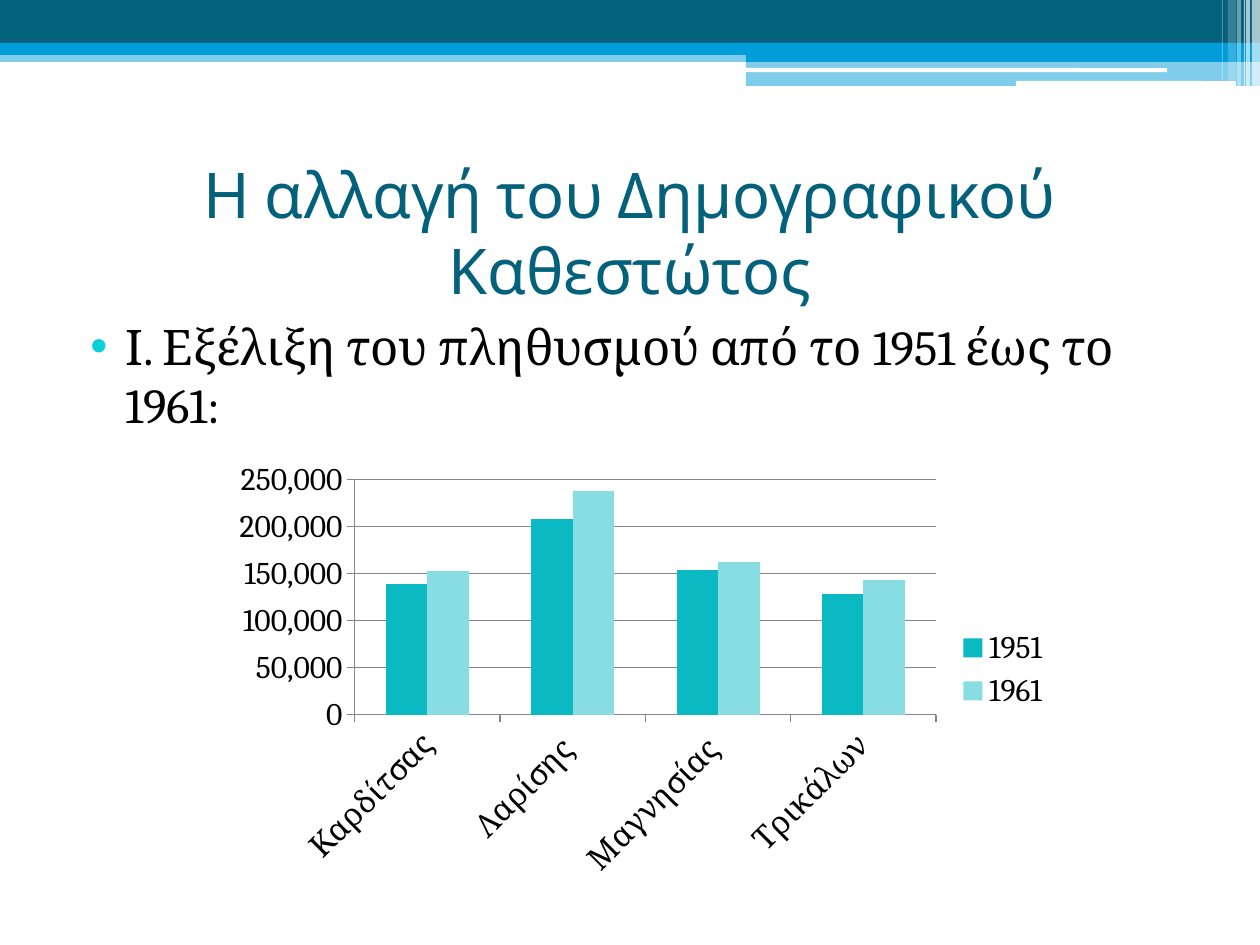
from lxml import etree
from pptx import Presentation, util as u
from pptx.chart.data import CategoryChartData
from pptx.dml.color import RGBColor
from pptx.enum import chart as ch, shapes, text
from pptx.oxml import parse_xml
from pptx.oxml.ns import qn, nsdecls

PX = 914400 // 126
WHITE, DEEP, BLUE = "FFFFFF", "04617B", "009DD9"

# Header bands: left, top, width, height, colour, opacity %
BANDS = [
    (0, 50, 1260, 12, BLUE, 50),
    (0, 0, 1260, 43, DEEP, 100),
    (0, 43, 1260, 12, BLUE, 100),
    (746, 49, 514, 13, BLUE, 100),
    (746, 61, 514, 25, BLUE, 50),
]
# Rounded white lines over the bands
LINES = [(745, 68, 422, 4, WHITE, 100), (1016, 81, 220, 5, WHITE, 100)]
# Vertical stripes at the right: left, width, height, opacity %
STRIPES = [(1252, 8, 86, 65), (1246, 4, 86, 65), (1244, 1, 86, 60),
           (1237, 4, 86, 40), (1228, 8, 81, 20), (1222, 1, 81, 30)]

TITLE = "Η αλλαγή του Δημογραφικού Καθεστώτος"
POINT = "Ι. Εξέλιξη του πληθυσμού από το 1951 έως το 1961:"
AREAS = ["Καρδίτσας", "Λαρίσης ", "Μαγνησίας ", "Τρικάλων"]
SERIES = [("1951", (139000, 208000, 154000, 128000), "0BB9C3"),
          ("1961", (153000, 238000, 162000, 143000), "87DDE1")]
FRAME = (223, 452, 840, 435)
PLOT = (355, 480, 581, 235)


def emu(*nums):
    return [u.Emu(n * PX) for n in nums]


def rgb(code):
    return RGBColor.from_string(code)


def style(font, name, size, color):
    font.name, font.size = name, u.Pt(size)
    font.color.rgb = rgb(color)


def band(kind, x, y, w, h, color, alpha):
    shape = slide.shapes.add_shape(kind, *emu(x, y, w, h))
    shape.shadow.inherit = False
    shape.line.fill.background()
    shape.fill.solid()
    shape.fill.fore_color.rgb = rgb(color)
    if alpha < 100:
        tint = shape.fill._xPr.find(".//" + qn("a:srgbClr"))
        etree.SubElement(tint, qn("a:alpha"), val=str(alpha * 1000))


def write(box, words, name, size, color, anchor):
    frame = slide.shapes.add_textbox(*emu(*box)).text_frame
    frame.word_wrap = True
    frame.vertical_anchor = anchor
    para = frame.paragraphs[0]
    run = para.add_run()
    run.text = words
    style(run.font, name, size, color)
    return para


deck = Presentation()
deck.slide_width, deck.slide_height = emu(1260, 945)
slide = deck.slides.add_slide(deck.slide_layouts[6])

# Header
for item in BANDS:
    band(shapes.MSO_SHAPE.RECTANGLE, *item)
for item in LINES:
    band(shapes.MSO_SHAPE.ROUNDED_RECTANGLE, *item)
for x, w, h, alpha in STRIPES:
    band(shapes.MSO_SHAPE.RECTANGLE, x, 0, w, h, WHITE, alpha)

# Title and bullet
para = write((63, 157, 1134, 148), TITLE, "Cabin", 36, DEEP, text.MSO_ANCHOR.MIDDLE)
para.alignment = text.PP_ALIGN.CENTER
para = write((63, 310, 1134, 130), POINT, "Cambria", 28, "000000", text.MSO_ANCHOR.TOP)
props = para._p.get_or_add_pPr()
left, hang = emu(50, -35)
props.set("marL", str(left))
props.set("indent", str(hang))
tint = etree.SubElement(props, qn("a:buClr"))
etree.SubElement(tint, qn("a:srgbClr"), val="0BD0D9")
etree.SubElement(props, qn("a:buFont"), typeface="Arial")
etree.SubElement(props, qn("a:buChar"), char="•")

# Population chart
data = CategoryChartData(number_format="#,##0")
data.categories = AREAS
for name, vals, color in SERIES:
    data.add_series(name, vals)
chart = slide.shapes.add_chart(
    ch.XL_CHART_TYPE.COLUMN_CLUSTERED, *emu(*FRAME), data).chart
style(chart.font, "Cambria", 18, "000000")
chart.has_title = False
chart.has_legend = True
chart.legend.position = ch.XL_LEGEND_POSITION.RIGHT
chart.legend.include_in_layout = False

plot = chart.plots[0]
plot.gap_width, plot.overlap, plot.vary_by_categories = 150, 0, False
for ser, (name, vals, color) in zip(plot.series, SERIES):
    ser.format.fill.solid()
    ser.format.fill.fore_color.rgb = rgb(color)

# Axes
cat, val = chart.category_axis, chart.value_axis
val.minimum_scale, val.maximum_scale, val.major_unit = 0, 250000, 50000
val.has_major_gridlines = True
val.tick_labels.number_format = "#,##0"
val.tick_labels.number_format_is_linked = False
for axis in (cat, val):
    axis.major_tick_mark = ch.XL_TICK_MARK.OUTSIDE
    style(axis.tick_labels.font, "Cambria", 18, "000000")
for part in (cat, val, val.major_gridlines):
    part.format.line.color.rgb = rgb("868686")
    part.format.line.width = u.Pt(0.75)
cat._element.find(qn("c:txPr")).find(qn("a:bodyPr")).set("rot", "-2700000")

# Inner plot area as shares of the chart frame
shares = {"x": (PLOT[0] - FRAME[0]) / FRAME[2], "y": (PLOT[1] - FRAME[1]) / FRAME[3],
          "w": PLOT[2] / FRAME[2], "h": PLOT[3] / FRAME[3]}
area = chart._chartSpace.chart.plotArea
for old in area.findall(qn("c:layout")):
    area.remove(old)
rules = "".join(f'<c:{key}Mode val="edge"/>' for key in "xy")
rules += "".join(f'<c:{key} val="{num:.3f}"/>' for key, num in shares.items())
area.insert(0, parse_xml(
    f'<c:layout {nsdecls("c")}><c:manualLayout><c:layoutTarget val="inner"/>'
    f'{rules}</c:manualLayout></c:layout>'))

deck.save("out.pptx")
